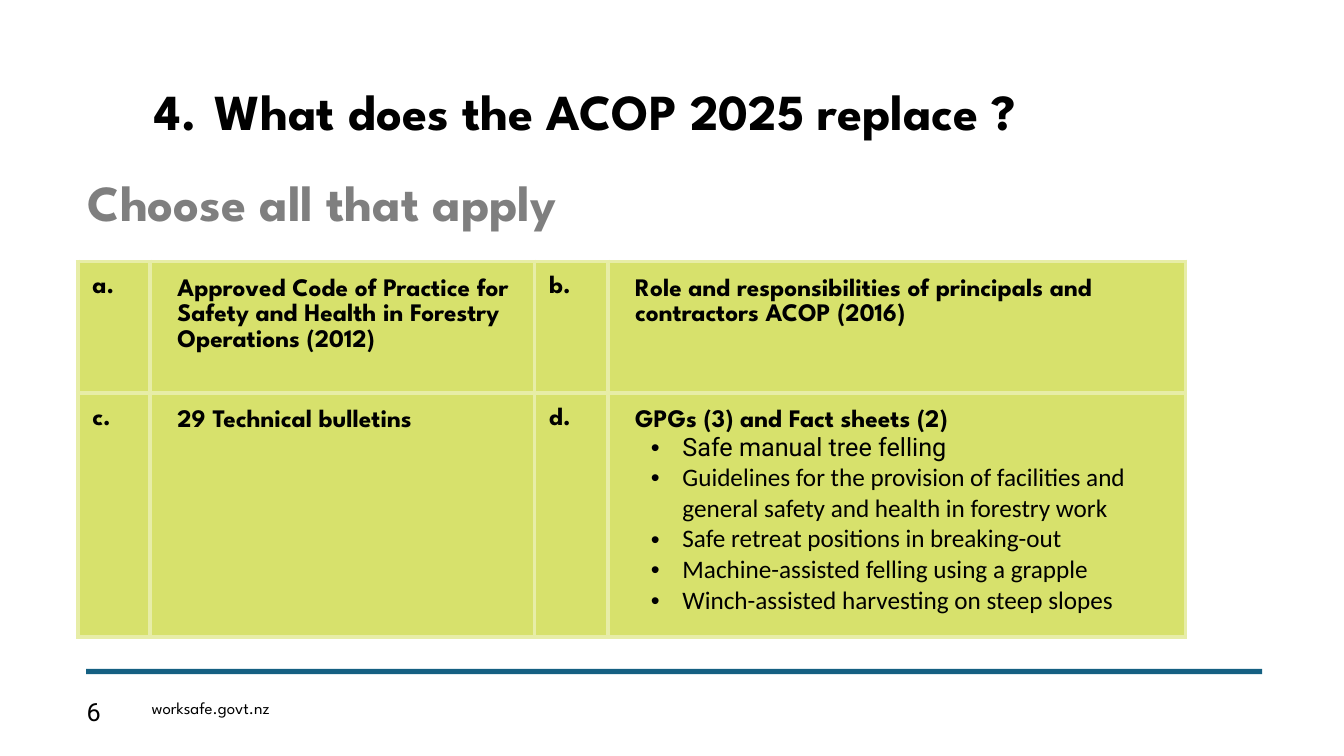
from dataclasses import dataclass

from lxml import etree
from pptx import Presentation
from pptx.dml.color import RGBColor
from pptx.enum import shapes, text
from pptx.oxml import ns
from pptx.util import Pt

PX = 9525  # one px in EMU, 96 px to the inch
HEADING_FONT, BODY_FONT, LIST_FONT = "League Spartan", "Roboto", "Calibri"
BLACK, GREY, BLUE = "000000", "7F7F7F", "156082"
LIME, PALE_LIME = "D7E16C", "E7EDA7"


@dataclass
class Line:
    """One paragraph and its formatting; lengths in px, sizes in points."""
    words: str
    size: int = 18
    font: str = HEADING_FONT
    color: str = BLACK
    bold: bool = True
    left: int = 0
    hanging: int = 0
    spacing: float | None = None
    around: int = 0
    bullet: str = ""
    number: int = 0


@dataclass
class Label:
    """A text box with one line."""
    box: tuple[int, int, int, int]
    line: Line


def rgb(color: str) -> RGBColor:
    return RGBColor.from_string(color)


def emu(*lengths: int) -> list[int]:
    return [length * PX for length in lengths]


def write(frame, lines: list[Line]) -> None:
    frame.word_wrap = True
    for index, line in enumerate(lines):
        paragraph = frame.add_paragraph() if index else frame.paragraphs[0]
        properties = paragraph._p.get_or_add_pPr()
        properties.set("marL", str(line.left * PX))
        properties.set("indent", str(-line.hanging * PX))
        if line.bullet:
            etree.SubElement(properties, ns.qn("a:buFont"), typeface="Arial")
            etree.SubElement(properties, ns.qn("a:buChar"), char=line.bullet)
        elif line.number:
            etree.SubElement(properties, ns.qn("a:buFont"), typeface="+mj-lt")
            etree.SubElement(properties, ns.qn("a:buAutoNum"),
                             type="arabicPeriod", startAt=str(line.number))
        if line.spacing:
            paragraph.line_spacing = line.spacing
        if line.around:
            paragraph.space_after = Pt(line.around)
        run = paragraph.add_run()
        run.text = line.words
        run.font.name, run.font.size = line.font, Pt(line.size)
        run.font.bold, run.font.color.rgb = line.bold, rgb(line.color)


def add_label(slide, label: Label) -> None:
    write(slide.shapes.add_textbox(*emu(*label.box)).text_frame, [label.line])


def style_cell(cell) -> None:
    cell.fill.solid()
    cell.fill.fore_color.rgb = rgb(LIME)
    cell.margin_left = cell.margin_right = 14 * PX
    cell.margin_top = cell.margin_bottom = 14 * PX
    properties = cell._tc.get_or_add_tcPr()
    for position, side in enumerate(("lnL", "lnR", "lnT", "lnB")):
        border = etree.Element(ns.qn(f"a:{side}"), w=str(Pt(3)))
        fill = etree.SubElement(border, ns.qn("a:solidFill"))
        etree.SubElement(fill, ns.qn("a:srgbClr"), val=PALE_LIME)
        properties.insert(position, border)


def letter(words: str) -> list[Line]:
    return [Line(words, around=6)]


def answer(words: str) -> Line:
    return Line(words, left=12, spacing=1.1)


def item(words: str, font: str = LIST_FONT) -> Line:
    return Line(words, font=font, bold=False, left=57, hanging=30, bullet="•")


QUESTION = Line("What does the ACOP 2025 replace ?", size=36,
                left=57, hanging=57, spacing=1.1, number=4)
LABELS = [
    Label((74, 158, 639, 68), Line("Choose all that apply", size=36, color=GREY)),
    Label((73, 658, 62, 38), Line("6", font=BODY_FONT, bold=False)),
    Label((135, 660, 432, 35), Line("worksafe.govt.nz", size=12, bold=False)),
]
COLUMN_WIDTHS = [69, 366, 70, 550]
ROW_HEIGHTS = [125, 233]
ANSWERS = [
    [letter("a."),
     [answer("Approved Code of Practice for Safety and Health in Forestry Operations (2012)")],
     letter("b."),
     [answer("Role and responsibilities of principals and contractors ACOP (2016)")]],
    [letter("c."),
     [answer("29 Technical bulletins")],
     letter("d."),
     [answer("GPGs (3) and Fact sheets (2)"),
      item("Safe manual tree felling", BODY_FONT),
      item("Guidelines for the provision of facilities and general safety and health in forestry work"),
      item("Safe retreat positions in breaking-out"),
      item("Machine-assisted felling using a grapple"),
      item("Winch-assisted harvesting on steep slopes")]],
]


def add_question(slide) -> None:
    title = slide.shapes.title
    title.left, title.top, title.width, title.height = emu(74, 68, 967, 68)
    frame = title.text_frame
    frame.margin_left = frame.margin_right = 0
    frame.margin_top = frame.margin_bottom = 0
    frame.vertical_anchor = text.MSO_ANCHOR.MIDDLE
    frame.auto_size = text.MSO_AUTO_SIZE.NONE
    write(frame, [QUESTION])
    frame.paragraphs[0].alignment = text.PP_ALIGN.CENTER


def add_answers(slide) -> None:
    box = emu(74, 249, sum(COLUMN_WIDTHS), sum(ROW_HEIGHTS))
    table = slide.shapes.add_table(len(ROW_HEIGHTS), len(COLUMN_WIDTHS), *box).table
    table.first_row = table.horz_banding = False
    for column, width in zip(table.columns, COLUMN_WIDTHS):
        column.width = width * PX
    for row, height, contents in zip(table.rows, ROW_HEIGHTS, ANSWERS):
        row.height = height * PX
        for cell, lines in zip(row.cells, contents):
            style_cell(cell)
            write(cell.text_frame, lines)


def add_rule(slide) -> None:
    rule = slide.shapes.add_shape(shapes.MSO_SHAPE.RECTANGLE, *emu(82, 637, 1120, 5))
    rule.shadow.inherit = False
    rule.fill.solid()
    rule.fill.fore_color.rgb = rgb(BLUE)
    rule.line.fill.background()


def main() -> None:
    presentation = Presentation()
    presentation.slide_width, presentation.slide_height = emu(1280, 720)
    slide = presentation.slides.add_slide(presentation.slide_layouts[5])

    # Question and its answers
    add_question(slide)
    add_answers(slide)

    # Footer rule, then the instruction and footer texts
    add_rule(slide)
    for label in LABELS:
        add_label(slide, label)

    presentation.save("out.pptx")


if __name__ == "__main__":
    main()
